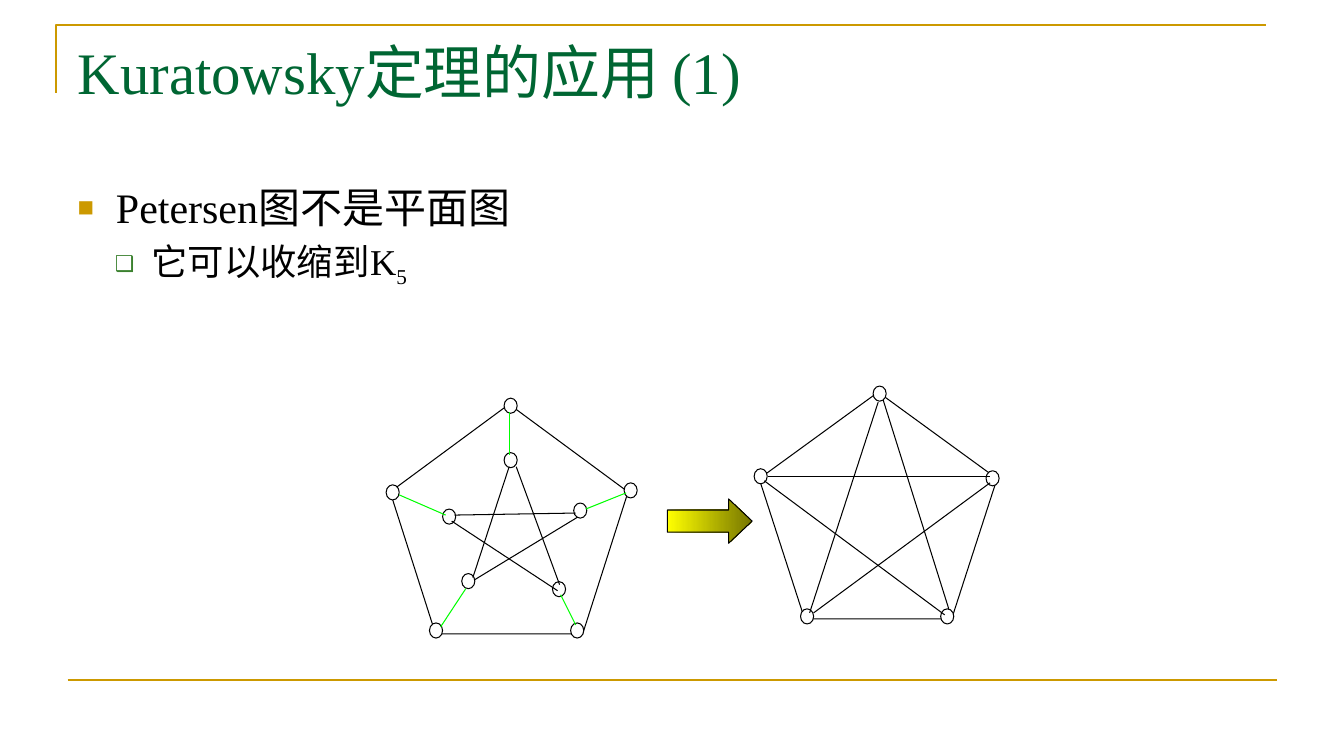
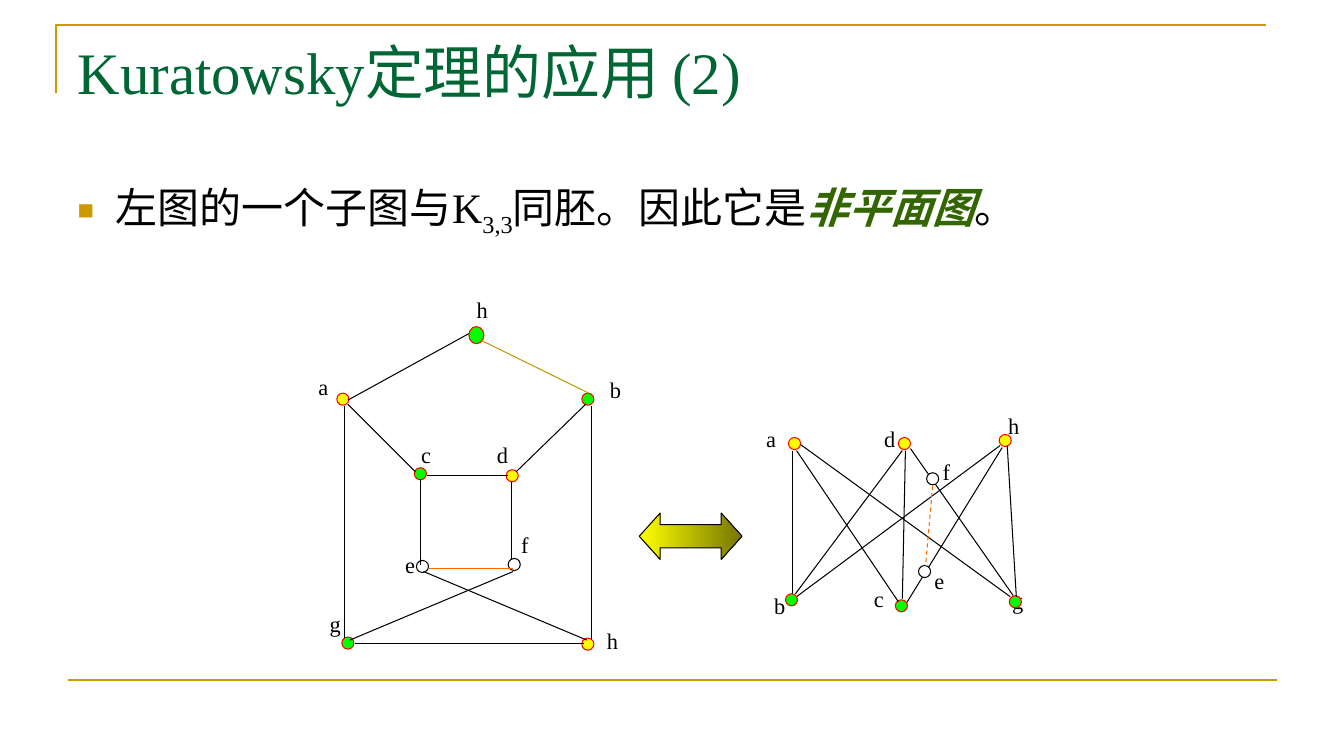
"""Build two slides on applications of the Kuratowsky theorem."""
from lxml.etree import SubElement
from pptx import Presentation
from pptx.dml.color import RGBColor
from pptx.enum.dml import MSO_LINE
from pptx.enum.shapes import MSO_CONNECTOR, MSO_SHAPE as SHAPE
from pptx.enum.text import MSO_ANCHOR, MSO_AUTO_SIZE, PP_ALIGN
from pptx.oxml.ns import qn
from pptx.util import Inches, Pt

BLACK = RGBColor(0x00, 0x00, 0x00)
WHITE = RGBColor(0xFF, 0xFF, 0xFF)
GOLD = RGBColor(0xCC, 0x99, 0x00)
DARK_GOLD = RGBColor(0xC8, 0x96, 0x00)
TITLE_GREEN = RGBColor(0x00, 0x66, 0x33)
BULLET_GREEN = RGBColor(0x3B, 0x81, 0x2F)
TERM_GREEN = RGBColor(0x33, 0x66, 0x00)
GREEN = RGBColor(0x00, 0xFF, 0x00)
YELLOW = RGBColor(0xFF, 0xFF, 0x00)
OLIVE = RGBColor(0x76, 0x76, 0x00)
RED = RGBColor(0xFF, 0x00, 0x00)
ORANGE = RGBColor(0xFF, 0x66, 0x00)
SERIF, SANS = "Times New Roman", "Arial"

TITLE_BOX = (0.67, 0.3, 12, 1.25)
BODY_BOX = (0.67, 1.75, 12, 4.95)
FRAME = [(0.56, 0.92), (0.56, 0.25), (12.56, 0.25)]
FOOTER_RULE = (0.67, 6.75, 12.67, 6.75)
THIN, RULE = 0.75, 1.5

LEVELS = [
    dict(size=30, left=0.38, hang=0.38, char="■", color=GOLD, pct=65),
    dict(size=26, left=0.73, hang=0.36, char="❑", color=BULLET_GREEN, pct=60),
]
SUB = dict(sub=True)
TERM = dict(color=TERM_GREEN, strong=True)

PETERSEN_BODY = [
    (0, [("Petersen", {}), ("图不是平面图", dict(font=SANS))]),
    (1, [("它可以收缩到K", {}), ("5", SUB)]),
]
PETERSEN_SIZE = (0.13, 0.15)
PENTAGONS = [(7.53, 3.89, 2.36, 2.25), (3.87, 4.01, 2.36, 2.28)]
PETERSEN_NODES = [
    (5, 3.95), (3.83, 4.81), (6.19, 4.79), (4.26, 6.18), (5.66, 6.18),
    (5, 4.49), (4.39, 5.05), (4.58, 5.69), (5.48, 5.77), (5.69, 4.99),
    (8.66, 3.83), (7.48, 4.65), (9.78, 4.67), (7.94, 6.04), (9.33, 6.04),
]
SPOKES = [
    (5.05, 4.09, 5.05, 4.51), (3.96, 4.91, 4.42, 5.11),
    (4.62, 5.84, 4.37, 6.22), (5.56, 5.9, 5.71, 6.2),
    (5.81, 5.05, 6.21, 4.89),
]
STAR_EDGES = [
    (5.05, 4.63, 4.69, 5.73), (5.12, 4.63, 5.55, 5.8),
    (4.51, 5.11, 5.71, 5.09), (4.48, 5.17, 5.53, 5.86),
    (4.71, 5.75, 5.73, 5.13),
    (8.71, 3.99, 8.03, 6.08), (7.62, 4.73, 9.82, 4.73),
    (8.76, 3.97, 9.41, 6.04), (7.58, 4.77, 9.37, 6.1),
    (8.07, 6.08, 9.82, 4.79),
]

SUBGRAPH_BODY = [
    (0, [("左图的一个子图与K", {}), ("3,3", SUB), ("同胚。因此它是", {}),
         ("非平面图", TERM), ("。", {})]),
]
NODE_SIZE, TOP_NODE_SIZE = (0.12, 0.12), (0.15, 0.17)
LABEL_SIZE = (0.56, 0.69)
YELLOW_NODES = [(3.34, 3.9), (5.77, 6.33), (5.02, 4.66),
                (7.82, 4.34), (8.91, 4.34), (9.91, 4.31)]
GREEN_NODES = [(3.39, 6.32), (4.11, 4.64), (5.77, 3.9),
               (7.79, 5.89), (8.88, 5.95), (10.01, 5.91)]
WHITE_NODES = [(4.13, 5.56), (5.04, 5.54), (9.19, 4.69), (9.11, 5.61)]
TOP_NODE = (4.65, 3.24)
LABELS = [
    ("h", 4.63, 2.89), ("a", 3.06, 3.65), ("b", 5.95, 3.68),
    ("c", 4.08, 4.33), ("d", 4.83, 4.33), ("e", 3.92, 5.42),
    ("f", 5.07, 5.22), ("g", 3.17, 6), ("h", 5.92, 6.17),
    ("a", 7.5, 4.17), ("d", 8.67, 4.17), ("h", 9.9, 4.04),
    ("b", 7.58, 5.83), ("c", 8.57, 5.76), ("g", 9.94, 5.78),
    ("f", 9.25, 4.5), ("e", 9.17, 5.58),
]
BACK_EDGES = [
    (7.9, 5.92, 9.92, 4.42), (9.94, 4.44, 8.98, 6),
    (9.03, 4.45, 10.05, 5.91), (7.86, 4.47, 7.86, 5.95),
]
FRONT_EDGES = [
    (3.45, 3.97, 4.65, 3.31), (3.52, 6.38, 5.79, 6.38),
    (3.42, 4.03, 3.42, 6.33), (5.87, 4.03, 5.87, 6.35),
    (4.24, 4.72, 5.04, 4.72), (4.17, 4.75, 4.17, 5.61),
    (5.07, 4.78, 5.07, 5.56), (3.45, 4.01, 4.12, 4.68),
    (5.12, 4.68, 5.81, 4.01), (3.47, 6.35, 5.09, 5.67),
    (4.2, 5.67, 5.82, 6.35),
    (7.9, 4.47, 8.91, 5.97), (7.94, 4.41, 10.02, 5.92),
    (8.95, 4.47, 7.89, 5.89), (8.98, 4.47, 8.95, 5.94),
    (9.99, 4.42, 10.08, 5.92),
]
TOP_EDGE = (4.78, 3.38, 5.84, 3.9)
REMOVED_EDGE = (4.25, 5.64, 5.09, 5.64)
MERGED_EDGE = (9.25, 4.82, 9.18, 5.61)


def inches(values):
    return [Inches(v) for v in values]


def add_run(p, text, size, color=BLACK, font=SERIF, sub=False, strong=False):
    r = p.add_run()
    r.text = text
    r.font.size, r.font.name = Pt(size), font
    r.font.color.rgb = color
    if strong:
        r.font.bold = r.font.italic = True
    if sub:
        r._r.get_or_add_rPr().set("baseline", "-25000")


def add_edge(slide, ends, color=BLACK, width=THIN, dash=None):
    line = slide.shapes.add_connector(MSO_CONNECTOR.STRAIGHT, *inches(ends))
    line.line.color.rgb, line.line.width = color, Pt(width)
    if dash:
        line.line.dash_style = dash
    SubElement(line.element.spPr, qn("a:effectLst"))


def add_edges(slide, edges, color=BLACK):
    for ends in edges:
        add_edge(slide, ends, color)


def add_figure(slide, kind, box, fill=WHITE, line=BLACK):
    s = slide.shapes.add_shape(kind, *inches(box))
    s.shadow.inherit = False
    s.line.color.rgb, s.line.width = line, Pt(THIN)
    s.fill.solid()
    s.fill.fore_color.rgb = fill
    return s


def add_nodes(slide, places, size, fill=WHITE, line=BLACK):
    for place in places:
        add_figure(slide, SHAPE.OVAL, (*place, *size), fill, line)


def add_arrow(slide, kind, box, head):
    s = add_figure(slide, kind, box)
    s.adjustments[1] = head
    s.fill.gradient()
    s.fill.gradient_angle = 0
    for stop, color in zip(s.fill.gradient_stops, (YELLOW, OLIVE)):
        stop.color.rgb = color


def add_label(slide, text, left, top):
    box = slide.shapes.add_textbox(*inches((left, top, *LABEL_SIZE)))
    box.text_frame.word_wrap = True
    p = box.text_frame.paragraphs[0]
    p.alignment = PP_ALIGN.JUSTIFY
    add_run(p, text, 16)


def set_bullet(p, level):
    pPr = p._p.get_or_add_pPr()
    pPr.set("marL", str(Inches(level["left"])))
    pPr.set("indent", str(-Inches(level["hang"])))
    color = SubElement(pPr, qn("a:buClr"))
    SubElement(color, qn("a:srgbClr"), val=str(level["color"]))
    SubElement(pPr, qn("a:buSzPct"), val=str(level["pct"] * 1000))
    SubElement(pPr, qn("a:buFont"), typeface=SANS)
    SubElement(pPr, qn("a:buChar"), char=level["char"])


def place_text(holder, box):
    holder.left, holder.top, holder.width, holder.height = inches(box)
    tf = holder.text_frame
    tf.auto_size, tf.vertical_anchor = MSO_AUTO_SIZE.NONE, MSO_ANCHOR.TOP
    return tf


def add_base_slide(prs, title, body):
    slide = prs.slides.add_slide(prs.slide_layouts[1])
    corner, *rest = [inches(point) for point in FRAME]
    builder = slide.shapes.build_freeform(*corner)
    builder.add_line_segments(rest, close=False)
    frame = builder.convert_to_shape()
    frame.shadow.inherit = False
    frame.fill.background()
    frame.line.color.rgb, frame.line.width = GOLD, Pt(RULE)
    add_edge(slide, FOOTER_RULE, GOLD, RULE)

    p = place_text(slide.shapes.title, TITLE_BOX).paragraphs[0]
    p.alignment = PP_ALIGN.LEFT
    add_run(p, title, 42, TITLE_GREEN)

    tf = place_text(slide.placeholders[1], BODY_BOX)
    for i, (depth, runs) in enumerate(body):
        p = tf.add_paragraph() if i else tf.paragraphs[0]
        p.level = depth
        set_bullet(p, LEVELS[depth])
        for text, style in runs:
            add_run(p, text, LEVELS[depth]["size"], **style)
    return slide


def build_petersen(prs):
    slide = add_base_slide(prs, "Kuratowsky定理的应用 (1)", PETERSEN_BODY)
    for box in PENTAGONS:
        add_figure(slide, SHAPE.REGULAR_PENTAGON, box)
    add_nodes(slide, PETERSEN_NODES, PETERSEN_SIZE)
    add_edges(slide, SPOKES, GREEN)
    add_edges(slide, STAR_EDGES)
    add_arrow(slide, SHAPE.RIGHT_ARROW, (6.62, 4.95, 0.84, 0.44), 0.53)


def build_subgraph(prs):
    slide = add_base_slide(prs, "Kuratowsky定理的应用 (2)", SUBGRAPH_BODY)
    add_edges(slide, BACK_EDGES)
    for label in LABELS:
        add_label(slide, *label)
    add_nodes(slide, YELLOW_NODES, NODE_SIZE, YELLOW, RED)
    add_nodes(slide, GREEN_NODES, NODE_SIZE, GREEN, RED)
    add_nodes(slide, WHITE_NODES, NODE_SIZE)
    add_edges(slide, FRONT_EDGES)
    add_edge(slide, REMOVED_EDGE, ORANGE)
    add_edge(slide, MERGED_EDGE, ORANGE, dash=MSO_LINE.DASH)
    add_arrow(slide, SHAPE.LEFT_RIGHT_ARROW, (6.34, 5.09, 1.02, 0.46), 0.45)
    add_nodes(slide, [TOP_NODE], TOP_NODE_SIZE, GREEN, RED)
    add_edge(slide, TOP_EDGE, DARK_GOLD)


def main():
    prs = Presentation()
    prs.slide_width, prs.slide_height = inches((13.33, 7.5))
    build_petersen(prs)
    build_subgraph(prs)
    prs.save("out.pptx")


if __name__ == "__main__":
    main()
